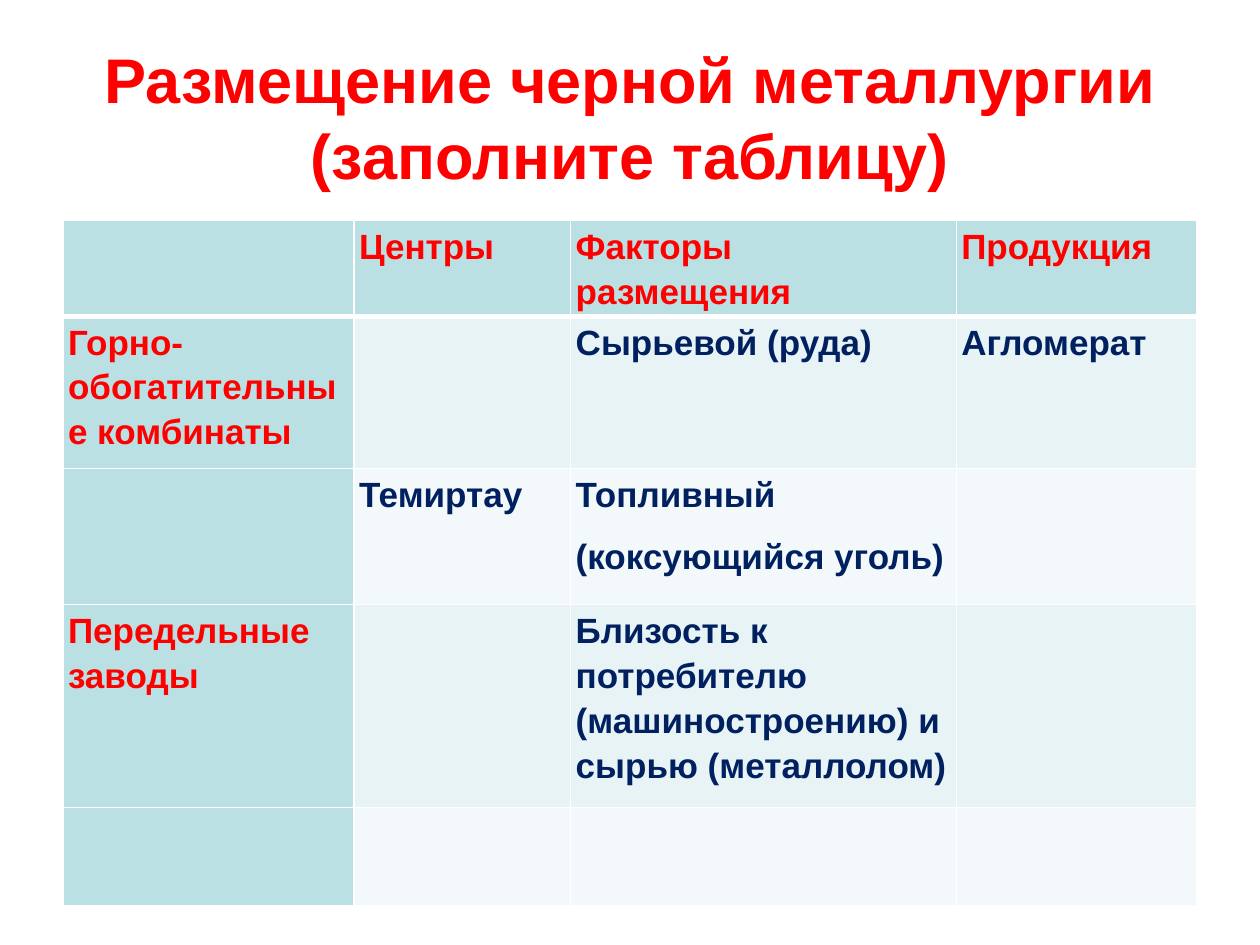
from lxml.etree import SubElement as Sub
from pptx import Presentation
from pptx.dml.color import RGBColor
from pptx.enum.text import MSO_ANCHOR as Anchor, PP_ALIGN as Align
from pptx.oxml.ns import qn
from pptx.util import Inches, Pt

RED, NAVY, WHITE = "FF0000", "002060", "FFFFFF"
HEAD, BANDS = "BBE0E3", ["F3F9FA", "E7F3F4"]


def write(para, text, size, color):
    run = para.add_run()
    run.text = text
    font = run.font
    font.name, font.size, font.bold = "Arial", Pt(size), True
    font.color.rgb = RGBColor.from_string(color)


def edge(cell, side, width):
    line = Sub(cell._tc.get_or_add_tcPr(), qn("a:ln" + side), w=str(Pt(width)))
    Sub(Sub(line, qn("a:solidFill")), qn("a:srgbClr"), val=WHITE)


prs = Presentation()
prs.slide_width, prs.slide_height = Inches(10), Inches(7.5)
slide = prs.slides.add_slide(prs.slide_layouts[5])

title = slide.shapes.title
title.left, title.top = Inches(0.5), Inches(0.3)
title.width, title.height = Inches(9), Inches(1.25)
frame = title.text_frame
frame.word_wrap = True
frame.vertical_anchor = Anchor.MIDDLE
para = frame.paragraphs[0]
para.alignment = Align.CENTER
write(para, "Размещение черной металлургии", 36, RED)
para.add_line_break()
write(para, "(заполните таблицу)", 36, RED)

rows = [
    ["", "Центры", "Факторы размещения", "Продукция"],
    ["Горно-обогатительные комбинаты", "", "Сырьевой (руда)", "Агломерат"],
    ["", "Темиртау", "Топливный\n(коксующийся уголь)", ""],
    ["Передельные заводы", "",
     "Близость к потребителю (машиностроению) и сырью (металлолом)", ""],
    ["", "", "", ""],
]
wides = [2.31, 1.72, 3.06, 1.91]
highs = [0.76, 1.21, 1.08, 1.61, 0.78]

table = slide.shapes.add_table(len(highs), len(wides), Inches(0.5), Inches(1.75),
                               Inches(9), Inches(sum(highs))).table
for col, wide in zip(table.columns, wides):
    col.width = Inches(wide)
for row, high in zip(table.rows, highs):
    row.height = Inches(high)

for r, row in enumerate(rows):
    for c, text in enumerate(row):
        cell = table.cell(r, c)
        label = r == 0 or c == 0
        for side in "LRTB":
            thick = (r, side) in [(0, "B"), (1, "T")]
            edge(cell, side, 3 if thick else 1)
        cell.fill.solid()
        cell.fill.fore_color.rgb = RGBColor.from_string(HEAD if label else BANDS[r % 2])
        if not text:
            continue
        cell.margin_left = cell.margin_right = Inches(0.04)
        cell.margin_top, cell.margin_bottom = Inches(0.01), 0
        frame = cell.text_frame
        for n, part in enumerate(text.split("\n")):
            para = frame.add_paragraph() if n else frame.paragraphs[0]
            para.line_spacing, para.space_after = 1.15, Pt(10)
            write(para, part, 20, RED if label else NAVY)

prs.save("out.pptx")
